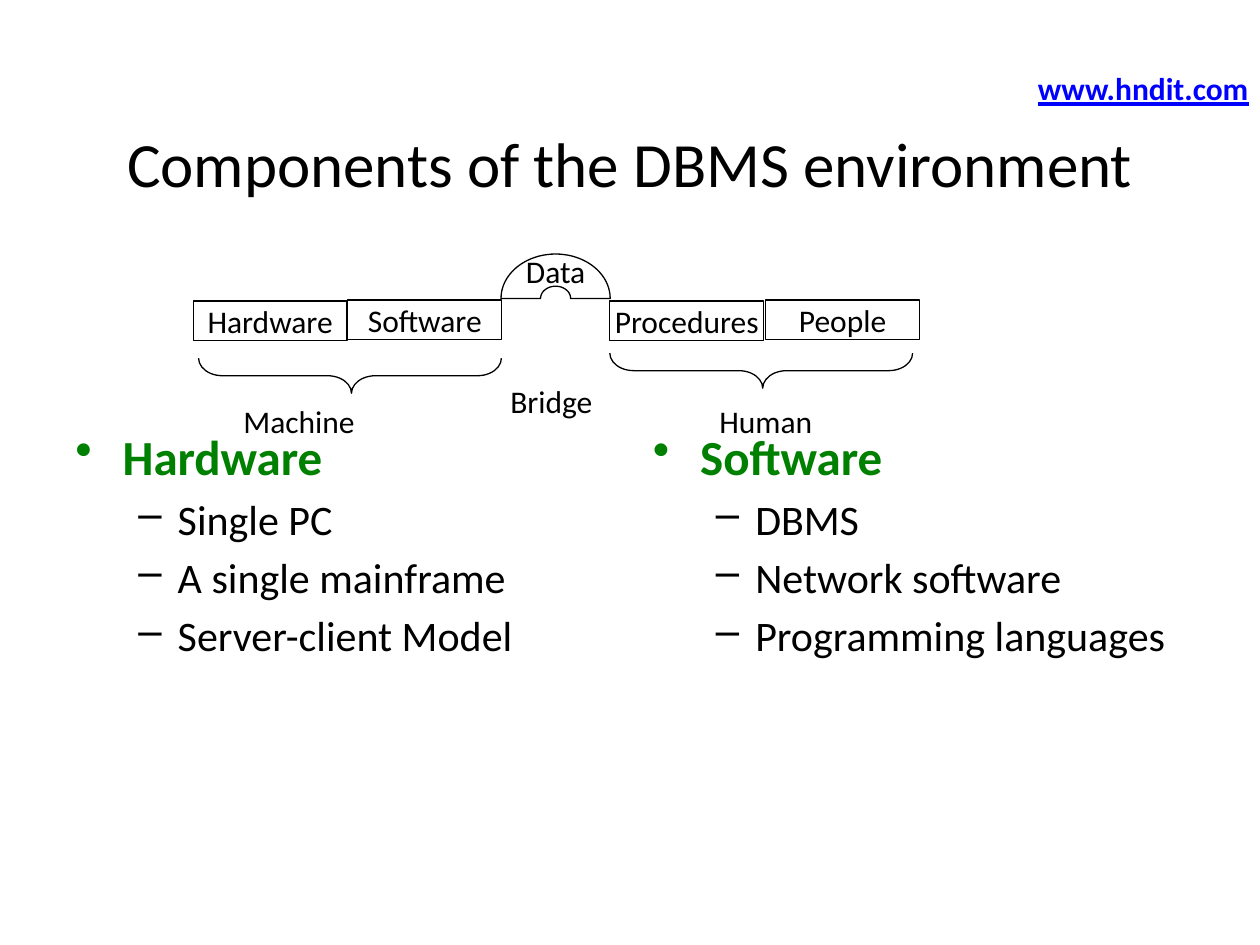
"""Build the slide on the components of a DBMS environment."""
import math
from dataclasses import dataclass, field

import lxml.etree
import pptx
import pptx.dml.color
import pptx.enum.shapes
import pptx.enum.text
import pptx.oxml.ns
import pptx.util

Pt = pptx.util.Pt
RGBColor = pptx.dml.color.RGBColor
MSO_SHAPE = pptx.enum.shapes.MSO_SHAPE
ANCHOR = pptx.enum.text.MSO_ANCHOR
ALIGN = pptx.enum.text.PP_ALIGN
AUTO_SIZE = pptx.enum.text.MSO_AUTO_SIZE

BLACK = RGBColor(0, 0, 0)
WHITE = RGBColor(255, 255, 255)
GREEN = RGBColor(0, 128, 0)
BLUE = RGBColor(0, 0, 255)

CENTRED = {"word_wrap": False, "vertical_anchor": ANCHOR.MIDDLE}
TIGHT = {"word_wrap": False, "auto_size": AUTO_SIZE.SHAPE_TO_FIT_TEXT}


@dataclass
class Box:
    text: str
    left: float
    top: float
    width: float
    height: float
    font: dict = field(default_factory=dict)

    def bounds(self) -> list:
        return [Pt(v) for v in (self.left, self.top, self.width, self.height)]


@dataclass
class Column:
    left: float
    heading: str
    items: tuple


@dataclass
class Bullet:
    char: str
    margin: float
    hanging: float
    before: float
    font: dict


HEADING = Bullet("•", 27, 27, 0, {"size": Pt(28), "bold": True, "color": GREEN})
ITEM = Bullet("–", 58.5, 22.5, 4.6, {"size": Pt(24)})

TITLE = Box("Components of the DBMS environment", 36, 48, 648, 90, {"size": Pt(36)})
COLUMNS = [
    Column(36, "Hardware", ("Single PC", "A single mainframe", "Server-client Model")),
    Column(366, "Software", ("DBMS", "Network software", "Programming languages")),
]
PARTS = [
    Box("Software", 198.8, 171.4, 88, 22.5),
    Box("Procedures", 348.5, 172, 88, 22.5),
    Box("People", 437.5, 171.4, 88, 22.5),
    Box("Hardware", 110.4, 172, 88, 22.5),
]
BRACES = [Box("", 190, 128.2, 20, 173), Box("", 425, 125.3, 20, 173)]
LABELS = [
    Box("Human", 404, 226, 72.5, 29),
    Box("Machine", 132, 226, 82.5, 29),
    Box("Bridge", 284.5, 214.5, 66, 29),
    Box("www.hndit.com", 586, 36, 135.5, 29,
        {"color": BLUE, "bold": True, "underline": True}),
]


def apply(obj, values: dict) -> None:
    for name, value in values.items():
        setattr(obj, name, value)


def add_run(p, text: str, values: dict) -> None:
    r = p.add_run()
    r.text = text
    font = {"name": "Calibri", "size": Pt(18), **values}
    r.font.color.rgb = font.pop("color", BLACK)
    apply(r.font, font)


def write(sp, box: Box, frame: dict, align) -> None:
    tf = sp.text_frame
    apply(tf, frame)
    p = tf.paragraphs[0]
    p.alignment = align
    add_run(p, box.text, box.font)


def outline(sp) -> None:
    sp.shadow.inherit = False
    sp.line.color.rgb = BLACK
    sp.line.width = Pt(0.75)


def fill_white(sp) -> None:
    sp.fill.solid()
    sp.fill.fore_color.rgb = WHITE


def add_text(s, box: Box, frame: dict, align=ALIGN.LEFT) -> None:
    write(s.shapes.add_textbox(*box.bounds()), box, frame, align)


def add_bullet(p, text: str, bullet: Bullet) -> None:
    pPr = p._p.get_or_add_pPr()
    pPr.set("marL", str(Pt(bullet.margin)))
    pPr.set("indent", str(-Pt(bullet.hanging)))
    bu = lxml.etree.SubElement(pPr, pptx.oxml.ns.qn("a:buChar"))
    bu.set("char", bullet.char)
    p.space_before = Pt(bullet.before)
    add_run(p, text, bullet.font)


def add_column(s, column: Column) -> None:
    sp = s.shapes.add_textbox(Pt(column.left), Pt(240), Pt(318), Pt(242.5))
    tf = sp.text_frame
    tf.word_wrap = True
    add_bullet(tf.paragraphs[0], column.heading, HEADING)
    for item in column.items:
        p = tf.add_paragraph()
        p.level = 1
        add_bullet(p, item, ITEM)


def add_part(s, box: Box) -> None:
    sp = s.shapes.add_shape(MSO_SHAPE.RECTANGLE, *box.bounds())
    outline(sp)
    fill_white(sp)
    write(sp, box, CENTRED, ALIGN.CENTER)


def add_brace(s, box: Box) -> None:
    sp = s.shapes.add_shape(MSO_SHAPE.LEFT_BRACE, *box.bounds())
    outline(sp)
    sp.fill.background()
    sp.rotation = 270
    sp.adjustments[0] = 0.685
    sp.adjustments[1] = 0.505


def half_ellipse(cx: float, base: float, rx: float, ry: float) -> list:
    angles = [math.pi * i / 40 for i in range(41)]
    return [(Pt(cx - rx * math.cos(a)), Pt(base - ry * math.sin(a))) for a in angles]


def add_arch(s, text: str) -> None:
    inner = half_ellipse(317.5, 170.6, 8.6, 7)
    outer = half_ellipse(317.5, 170.6, 31.2, 25.4)
    builder = s.shapes.build_freeform(*inner[0])
    builder.add_line_segments(inner[1:] + outer[::-1], close=True)
    sp = builder.convert_to_shape()
    outline(sp)
    fill_white(sp)
    frame = {**CENTRED, "margin_top": 0, "margin_bottom": Pt(6)}
    write(sp, Box(text, 0, 0, 0, 0), frame, ALIGN.CENTER)


def main() -> None:
    prs = pptx.Presentation()
    prs.slide_width, prs.slide_height = Pt(720), Pt(540)
    s = prs.slides.add_slide(prs.slide_layouts[6])
    add_text(s, TITLE, {**CENTRED, "word_wrap": True}, ALIGN.CENTER)
    for column in COLUMNS:
        add_column(s, column)
    add_arch(s, "Data")
    for part in PARTS:
        add_part(s, part)
    for brace in BRACES:
        add_brace(s, brace)
    for label in LABELS:
        add_text(s, label, TIGHT)
    prs.save("out.pptx")


if __name__ == "__main__":
    main()
